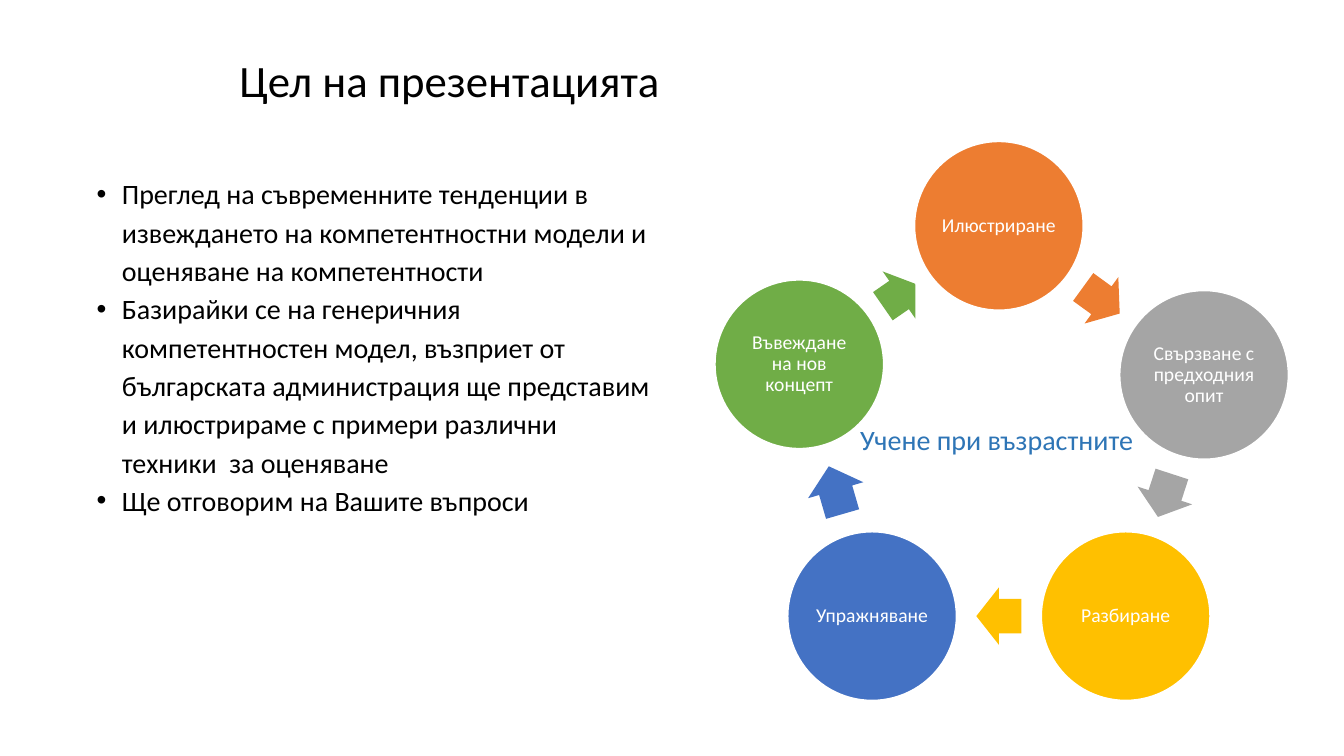
"""Builds a slide with the aims of a talk and a five-step learning cycle."""
from math import atan2, cos, degrees, dist, radians, sin

from lxml import etree
from pptx import Presentation
from pptx.dml.color import RGBColor
from pptx.enum.shapes import MSO_SHAPE
from pptx.enum.text import MSO_ANCHOR, PP_ALIGN
from pptx.oxml.ns import qn
from pptx.util import Pt

OVAL, ARROW = MSO_SHAPE.OVAL, MSO_SHAPE.RIGHT_ARROW
TOP, MIDDLE = MSO_ANCHOR.TOP, MSO_ANCHOR.MIDDLE
LEFT, CENTER = PP_ALIGN.LEFT, PP_ALIGN.CENTER

BLACK = RGBColor(0x00, 0x00, 0x00)
WHITE = RGBColor(0xFF, 0xFF, 0xFF)
ORANGE = RGBColor(0xED, 0x7D, 0x31)
GRAY = RGBColor(0xA5, 0xA5, 0xA5)
GOLD = RGBColor(0xFF, 0xC0, 0x00)
BLUE = RGBColor(0x44, 0x72, 0xC4)
GREEN = RGBColor(0x70, 0xAD, 0x47)
NAVY = RGBColor(0x2E, 0x75, 0xB6)

AIMS = [
    "Преглед на съвременните тенденции в извеждането на компетентностни модели и оценяване на компетентности",
    "Базирайки се на генеричния компетентностен модел, възприет от българската администрация ще представим "
    "и илюстрираме с примери различни техники  за оценяване",
    "Ще отговорим на Вашите въпроси",
]
STEPS = [
    ("Илюстриране", ORANGE, (0, 0)),
    ("Свързване с предходния опит", GRAY, (0, 0)),
    ("Разбиране", GOLD, (0, 0)),
    ("Упражняване", BLUE, (0, 0)),
    ("Въвеждане на нов концепт", GREEN, (4, -7.6)),
]
HUB_X, HUB_Y, RADIUS = 713.5, 315.4, 154.1
DISC = 120.96
ARROW_H, ARROW_PART = 41, 0.536


def write(shape, lines, size=20, color=BLACK, font="Calibri", align=LEFT,
          anchor=MIDDLE, space=0.9, inset=None, bullet=None):
    """Fill a shape with formatted paragraphs."""
    frame = shape.text_frame
    frame.word_wrap = True
    frame.vertical_anchor = anchor
    if inset is not None:
        frame.margin_left = frame.margin_right = Pt(inset)
        frame.margin_top = frame.margin_bottom = Pt(inset)
    for i, line in enumerate(lines):
        para = frame.add_paragraph() if i else frame.paragraphs[0]
        para.alignment = align
        para.line_spacing = space
        run = para.add_run()
        run.text = line
        run.font.name = font
        run.font.size = Pt(size)
        run.font.color.rgb = color
        if bullet:
            props = para._p.get_or_add_pPr()
            props.set("marL", str(Pt(18)))
            props.set("indent", str(Pt(-18)))
            etree.SubElement(props, qn("a:buFont")).set("typeface", "Arial")
            etree.SubElement(props, qn("a:buChar")).set("char", bullet)


class Page:
    """Hold the current slide and draw its elements."""

    def __init__(self, slide):
        self.shapes = slide.shapes

    def text(self, x, y, w, h, lines, **style):
        """Add a text box."""
        box = self.shapes.add_textbox(Pt(x), Pt(y), Pt(w), Pt(h))
        write(box, lines, **style)

    def shape(self, kind, mid, w, h, fill):
        """Add a flat filled shape around a middle point."""
        item = self.shapes.add_shape(kind, Pt(mid[0] - w / 2), Pt(mid[1] - h / 2), Pt(w), Pt(h))
        item.shadow.inherit = False
        item.fill.solid()
        item.fill.fore_color.rgb = fill
        item.line.fill.background()
        return item

    def disc(self, mid, label, fill):
        """Add a labelled circle."""
        item = self.shape(OVAL, mid, DISC, DISC, fill)
        item.line.color.rgb = WHITE
        item.line.width = Pt(1.5)
        write(item, [label], size=14, color=WHITE, align=CENTER, inset=1.4)

    def arrow(self, start, end, fill):
        """Add a block arrow halfway between two circles."""
        mid = ((start[0] + end[0]) / 2, (start[1] + end[1]) / 2)
        size = ARROW_PART * (dist(start, end) - DISC)
        item = self.shape(ARROW, mid, size, ARROW_H, fill)
        item.adjustments[0] = 0.6
        item.adjustments[1] = 0.5
        item.rotation = degrees(atan2(end[1] - start[1], end[0] - start[0])) % 360


def main():
    """Build and save the slide."""
    deck = Presentation()
    deck.slide_width, deck.slide_height = Pt(960), Pt(540)
    page = Page(deck.slides.add_slide(deck.slide_layouts[6]))

    page.text(164, 34, 648, 51, ["Цел на презентацията"], size=32)
    page.text(62, 119.5, 409.5, 380, AIMS, anchor=TOP, space=1.14, bullet="•")

    mids = []
    for i, (_, _, (dx, dy)) in enumerate(STEPS):
        turn = radians(360 / len(STEPS) * i)
        mids.append((HUB_X + RADIUS * sin(turn) + dx, HUB_Y - RADIUS * cos(turn) + dy))
    for i, (label, fill, _) in enumerate(STEPS):
        page.disc(mids[i], label, fill)
        page.arrow(mids[i], mids[(i + 1) % len(mids)], fill)

    page.text(570, 290, 284, 51, ["Учене при възрастните"], color=NAVY, align=CENTER)
    deck.save("out.pptx")


if __name__ == "__main__":
    main()
